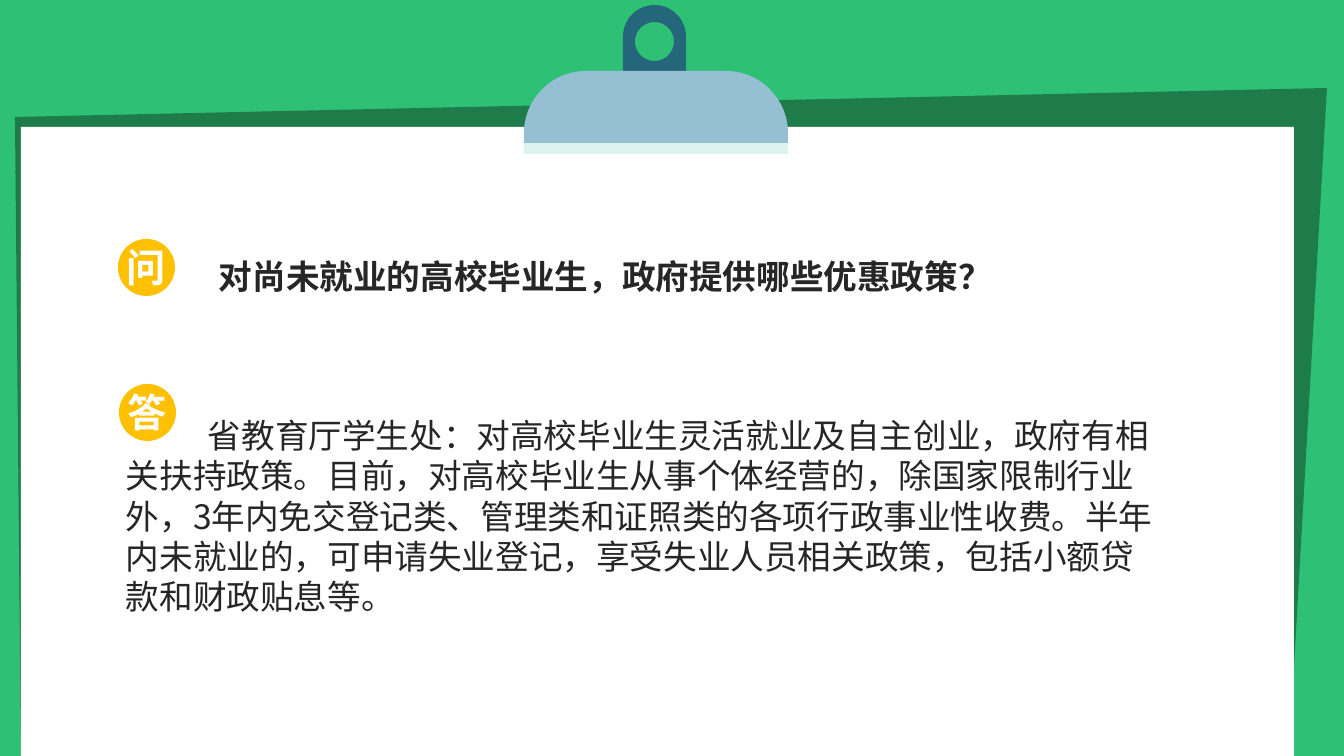
import pptx
import pptx.dml.color
import pptx.enum.lang
import pptx.enum.shapes
import pptx.enum.text
import pptx.oxml.ns
import pptx.util

# Content
QUESTION = "对尚未就业的高校毕业生，政府提供哪些优惠政策？"
ANSWER = ("省教育厅学生处：对高校毕业生灵活就业及自主创业，政府有相关扶持政策。"
          "目前，对高校毕业生从事个体经营的，除国家限制行业外，3年内免交登记类、"
          "管理类和证照类的各项行政事业性收费。半年内未就业的，可申请失业登记，"
          "享受失业人员相关政策，包括小额贷款和财政贴息等。")
BADGES = [("问", 118, 239), ("答", 119, 384)]
BADGE_SIZE = 57
TEXTS = [  # wording, box in px, top margin, bold, first-line indent
    (ANSWER, (116, 369, 1048, 254), 46, False, 82),
    (QUESTION, (209, 251, 862, 92), 5, True, 0),
]
BOARD = [(15, 117), (1327, 88), (1289, 756), (21, 756)]
PAPER = (21, 127, 1273, 629)
TAB = (623, 5, 686, 98)  # left, top, right, bottom
TAB_HOLE = (635, 22, 674, 61)
PLATES = [("plate_edge", (524, 82, 788, 154)), ("plate", (524, 71, 788, 143))]
PLATE_RADIUS = 62

THEME = {
    "font": "Noto Sans CJK SC", "body": 24, "badge_text": 28, "line": 28.8,
    "background": "2EC074", "board": "1E7C4B", "paper": "FFFFFF",
    "tab": "24667A", "plate_edge": "DCF4ED", "plate": "97BFD3",
    "badge": "FFC000", "ink": "262626", "white": "FFFFFF",
}
PX = 914400 / 100.8
CURVE = 0.55  # control-point distance of a quarter circle, in radii
MSO = pptx.enum.shapes.MSO_SHAPE
ALIGN = pptx.enum.text.PP_ALIGN
ANCHOR = pptx.enum.text.MSO_ANCHOR
CHINESE = pptx.enum.lang.MSO_LANGUAGE_ID.SIMPLIFIED_CHINESE
qn = pptx.oxml.ns.qn


def emu(*lengths):
    return [round(v * PX) for v in lengths]


def color(name):
    return pptx.dml.color.RGBColor.from_string(THEME[name])


def set_all(target, values):
    for key, value in values.items():
        setattr(target, key, value)


def paint(sp, name):
    sp.shadow.inherit = False
    sp.fill.solid()
    sp.fill.fore_color.rgb = color(name)
    sp.line.fill.background()


def quarter(start, corner, end):
    """Curve segment that rounds off a corner."""
    controls = [tuple(a + (c - a) * CURVE for a, c in zip(pt, corner)) for pt in (start, end)]
    return controls + [end]


def round_top(left, top, right, bottom, radius):
    return [[(left, bottom)], [(left, top + radius)],
            quarter((left, top + radius), (left, top), (left + radius, top)),
            [(right - radius, top)],
            quarter((right - radius, top), (right, top), (right, top + radius)),
            [(right, bottom)]]


def circle(left, top, right, bottom):
    x, y = (left + right) / 2, (top + bottom) / 2
    ends = [(x, top), (left, y), (x, bottom), (right, y), (x, top)]
    corners = [(left, top), (left, bottom), (right, bottom), (right, top)]
    return [[ends[0]]] + [quarter(a, c, b) for a, c, b in zip(ends, corners, ends[1:])]


def outline(s, name, *contours):
    """Each contour is a start point, then segments of one point or three."""
    builder = s.shapes.build_freeform(*emu(*contours[0][0][0]), scale=1.0)
    for i, contour in enumerate(contours):
        if i:
            builder.move_to(*emu(*contour[0][0]))
        builder.add_line_segments([emu(*pt) for seg in contour[1:] for pt in seg], close=True)
    sp = builder.convert_to_shape()
    paint(sp, name)
    lines = iter(list(sp._element.iter(qn("a:lnTo"))))
    for seg in (seg for contour in contours for seg in contour[1:]):
        group = [next(lines) for _ in seg]
        if len(group) == 3:
            curve = group[0].makeelement(qn("a:cubicBezTo"), {})
            group[0].addprevious(curve)
            for line in group:
                curve.append(line[0])
                line.getparent().remove(line)


def shape(s, kind, box, name):
    sp = s.shapes.add_shape(kind, *emu(*box))
    paint(sp, name)
    return sp


def write(tf, text, paragraph, size, bold, ink):
    p = tf.paragraphs[0]
    set_all(p, paragraph)
    r = p.add_run()
    r.text = text
    set_all(r.font, {"name": THEME["font"], "size": pptx.util.Pt(THEME[size]),
                     "bold": bold, "language_id": CHINESE})
    r.font.color.rgb = color(ink)
    latin = r._r.rPr.find(qn("a:latin"))
    latin.addnext(latin.makeelement(qn("a:ea"), {"typeface": THEME["font"]}))
    return p


def main():
    prs = pptx.Presentation()
    prs.slide_width, prs.slide_height = emu(1344, 756)
    s = prs.slides.add_slide(prs.slide_layouts[6])
    s.background.fill.solid()
    s.background.fill.fore_color.rgb = color("background")

    # Clipboard and paper
    outline(s, "board", [[pt] for pt in BOARD])
    shape(s, MSO.RECTANGLE, PAPER, "paper")

    # Clip
    outline(s, "tab", round_top(*TAB, (TAB[2] - TAB[0]) / 2), circle(*TAB_HOLE))
    for name, box in PLATES:
        outline(s, name, round_top(*box, PLATE_RADIUS))

    # Question and answer
    for text, box, margin_top, bold, indent in TEXTS:
        tf = s.shapes.add_textbox(*emu(*box)).text_frame
        set_all(tf, {"word_wrap": True, "margin_top": emu(margin_top)[0]})
        p = write(tf, text, {"line_spacing": pptx.util.Pt(THEME["line"])}, "body", bold, "ink")
        p._p.get_or_add_pPr().set("indent", str(emu(indent)[0]))

    # Round badges
    for text, left, top in BADGES:
        tf = shape(s, MSO.OVAL, (left, top, BADGE_SIZE, BADGE_SIZE), "badge").text_frame
        set_all(tf, {"word_wrap": False, "vertical_anchor": ANCHOR.MIDDLE, "margin_left": 0,
                     "margin_right": 0, "margin_top": 0, "margin_bottom": emu(2)[0]})
        write(tf, text, {"alignment": ALIGN.CENTER}, "badge_text", True, "white")

    prs.save("out.pptx")


if __name__ == "__main__":
    main()
